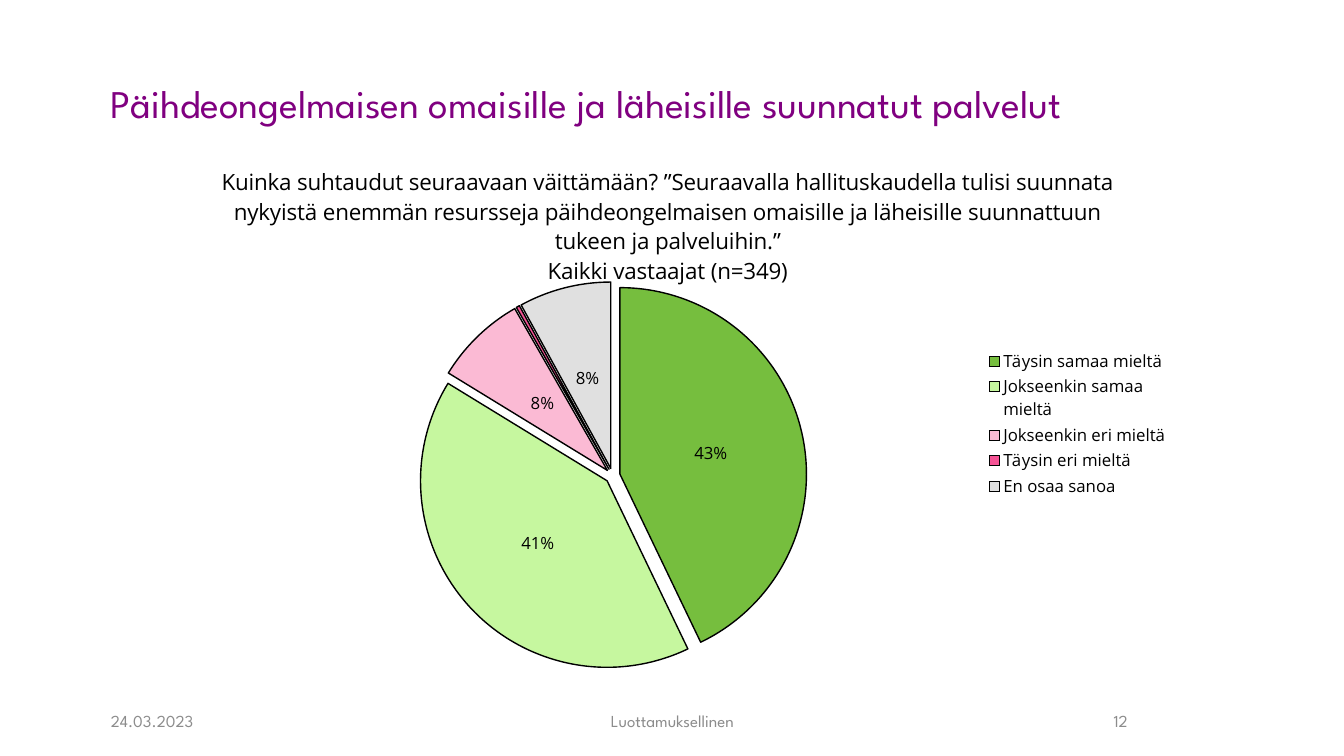
from lxml import etree
from pptx import Presentation
from pptx.chart.data import CategoryChartData
from pptx.dml.color import RGBColor
from pptx.enum.chart import XL_CHART_TYPE as Chart, XL_LABEL_POSITION as LabelPos
from pptx.enum.chart import XL_LEGEND_POSITION as LegendPos
from pptx.enum.text import MSO_ANCHOR as Anchor, PP_ALIGN as Align
from pptx.oxml.ns import qn
from pptx.util import Inches, Pt

# Content
TITLE = "Päihdeongelmaisen omaisille ja läheisille suunnatut palvelut"
QUESTION = [
    "Kuinka suhtaudut seuraavaan väittämään? ”Seuraavalla hallituskaudella tulisi "
    "suunnata nykyistä enemmän resursseja päihdeongelmaisen omaisille ja läheisille "
    "suunnattuun tukeen ja palveluihin.”",
    "Kaikki vastaajat (n=349)",
]
ANSWERS = [  # answer, share, colour
    ("Täysin samaa mieltä", 0.43, "green"),
    ("Jokseenkin samaa mieltä", 0.41, "lime"),
    ("Jokseenkin eri mieltä", 0.08, "pink"),
    ("Täysin eri mieltä", 0.003, "magenta"),
    ("En osaa sanoa", 0.08, "grey"),
]
FOOTER = [  # text, left, width, alignment
    ("24.03.2023", 1, 2.78, Align.LEFT),
    ("Luottamuksellinen", 4.56, 4.22, Align.CENTER),
    ("12", 9.56, 3.11, Align.CENTER),
]
COLORS = {
    "title": "800080", "footer": "8C8C8C", "text": "000000",
    "green": "54AE0E", "lime": "B8F588", "pink": "FAA9CA",
    "magenta": "F3297B", "grey": "D9D9D9",
}
HEAD_FONT, BODY_FONT = "League Spartan", "Open Sans"
LEFT, WIDTH = 1, 11.67


def style(font, size, color="text", name=BODY_FONT):
    font.size, font.name, font.bold = Pt(size), name, False
    font.color.rgb = RGBColor.from_string(COLORS[color])


def add_text(text, left, top, width, height, size, color,
             align=Align.LEFT, anchor=Anchor.MIDDLE, spacing=1.0):
    tf = slide.shapes.add_textbox(*map(Inches, (left, top, width, height))).text_frame
    tf.word_wrap, tf.vertical_anchor = True, anchor
    p = tf.paragraphs[0]
    p.alignment, p.line_spacing = align, spacing
    r = p.add_run()
    r.text = text
    style(r.font, size, color, HEAD_FONT)


def place(parent, inner=False, **shares):
    """Place a chart part by shares of the chart's size."""
    for old in parent.findall(qn("c:layout")):
        parent.remove(old)
    layout = etree.Element(qn("c:layout"))
    manual = etree.SubElement(layout, qn("c:manualLayout"))
    entries = [("layoutTarget", "inner")] if inner else []
    entries += [("xMode", "edge"), ("yMode", "edge"), *shares.items()]
    for tag, value in entries:
        etree.SubElement(manual, qn("c:" + tag)).set("val", str(value))
    overlay = parent.find(qn("c:overlay"))
    if overlay is None:
        parent.insert(0, layout)
    else:
        overlay.addprevious(layout)


prs = Presentation()
prs.slide_width, prs.slide_height = Inches(13.33), Inches(7.5)
slide = prs.slides.add_slide(prs.slide_layouts[6])

# Heading and footer
add_text(TITLE, LEFT, 0.23, WIDTH, 1.08, 28, "title", anchor=Anchor.BOTTOM, spacing=0.9)
for text, left, width, align in FOOTER:
    add_text(text, left, 6.95, width, 0.4, 12, "footer", align)

# Pie chart
data = CategoryChartData(number_format="0%")
data.categories = [answer for answer, _, _ in ANSWERS]
data.add_series("Kaikki vastaajat", [share for _, share, _ in ANSWERS])
chart = slide.shapes.add_chart(
    Chart.PIE, *map(Inches, (LEFT, 1.51, WIDTH, 5.23)), data).chart
style(chart.font, 10)
plot = chart.plots[0]
plot.vary_by_categories = True
place(chart._chartSpace.chart.plotArea, inner=True, x=0.27, y=0.246, w=0.33, h=0.736)

# Slices, pulled slightly apart
series = plot.series[0]
series.format.line.color.rgb = RGBColor.from_string(COLORS["text"])
explosion = etree.Element(qn("c:explosion"))
explosion.set("val", "4")
series._element.find(qn("c:spPr")).addnext(explosion)
for i, (_, _, color) in enumerate(ANSWERS):
    fmt = series.points[i].format
    fmt.fill.solid()
    fmt.fill.fore_color.rgb = RGBColor.from_string(COLORS[color])
    fmt.line.color.rgb = RGBColor.from_string(COLORS["text"])
    fmt.line.width = Pt(1)
for rgb in series._element.iterfind(f"{qn('c:dPt')}/{qn('c:spPr')}/{qn('a:solidFill')}/*"):
    etree.SubElement(rgb, qn("a:alpha")).set("val", "80000")

# Labels, none on the sliver below one percent
labels = series.data_labels
labels.show_value = True
labels.number_format, labels.number_format_is_linked = '[<0.01]"";0%', False
labels.position = LabelPos.CENTER
style(labels.font, 12)

# Chart title
tf = chart.chart_title.text_frame
for i, line in enumerate(QUESTION):
    p = tf.add_paragraph() if i else tf.paragraphs[0]
    r = p.add_run()
    r.text = line
    style(p.font, 16)
    style(r.font, 16)
chart.chart_title.include_in_layout = False
place(chart.chart_title._element, x=0.1, y=0.02)

# Legend
chart.has_legend = True
chart.legend.position = LegendPos.RIGHT
chart.legend.include_in_layout = False
style(chart.legend.font, 12)
place(chart.legend._element, x=0.745, y=0.37, w=0.17, h=0.29)

prs.save("out.pptx")
